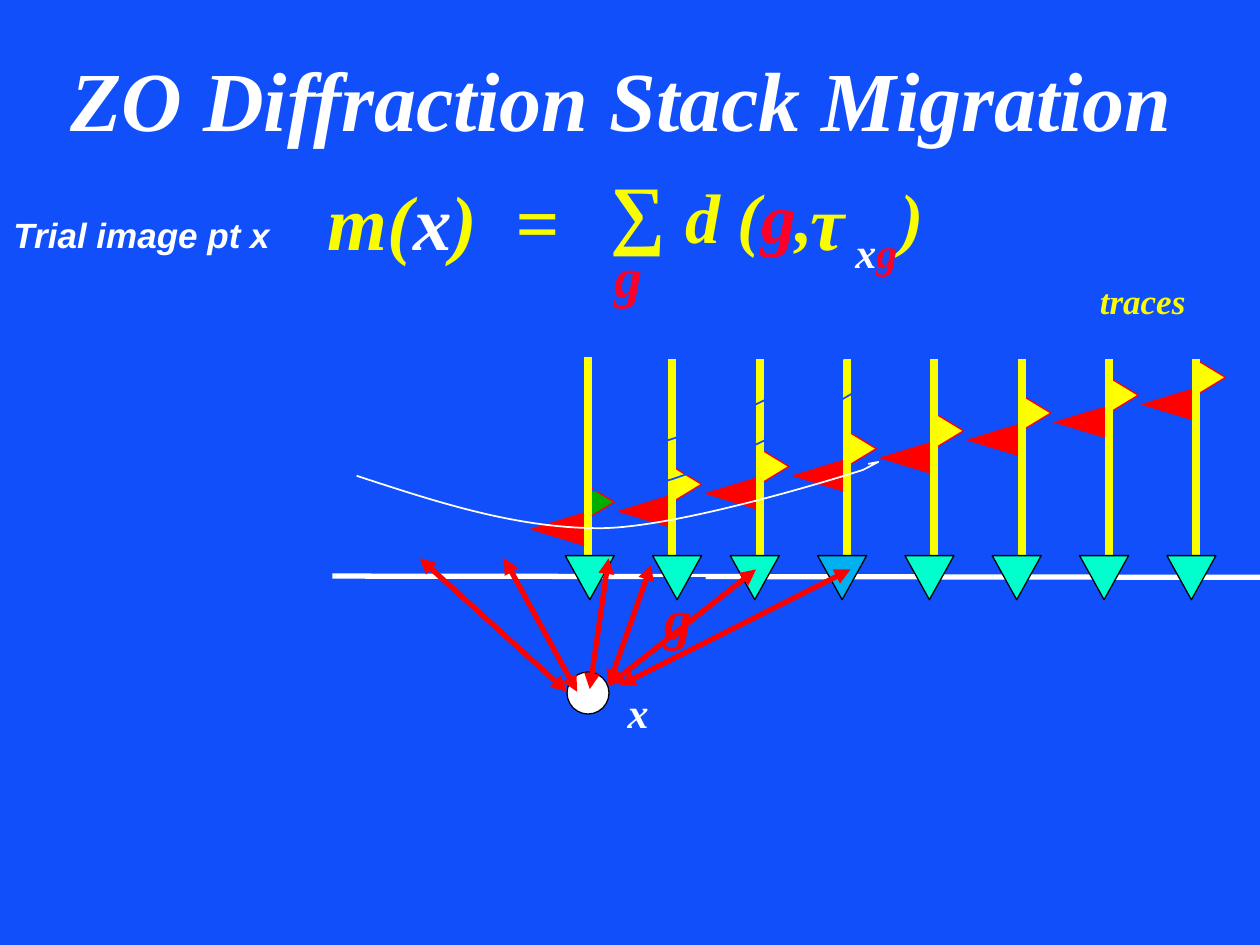
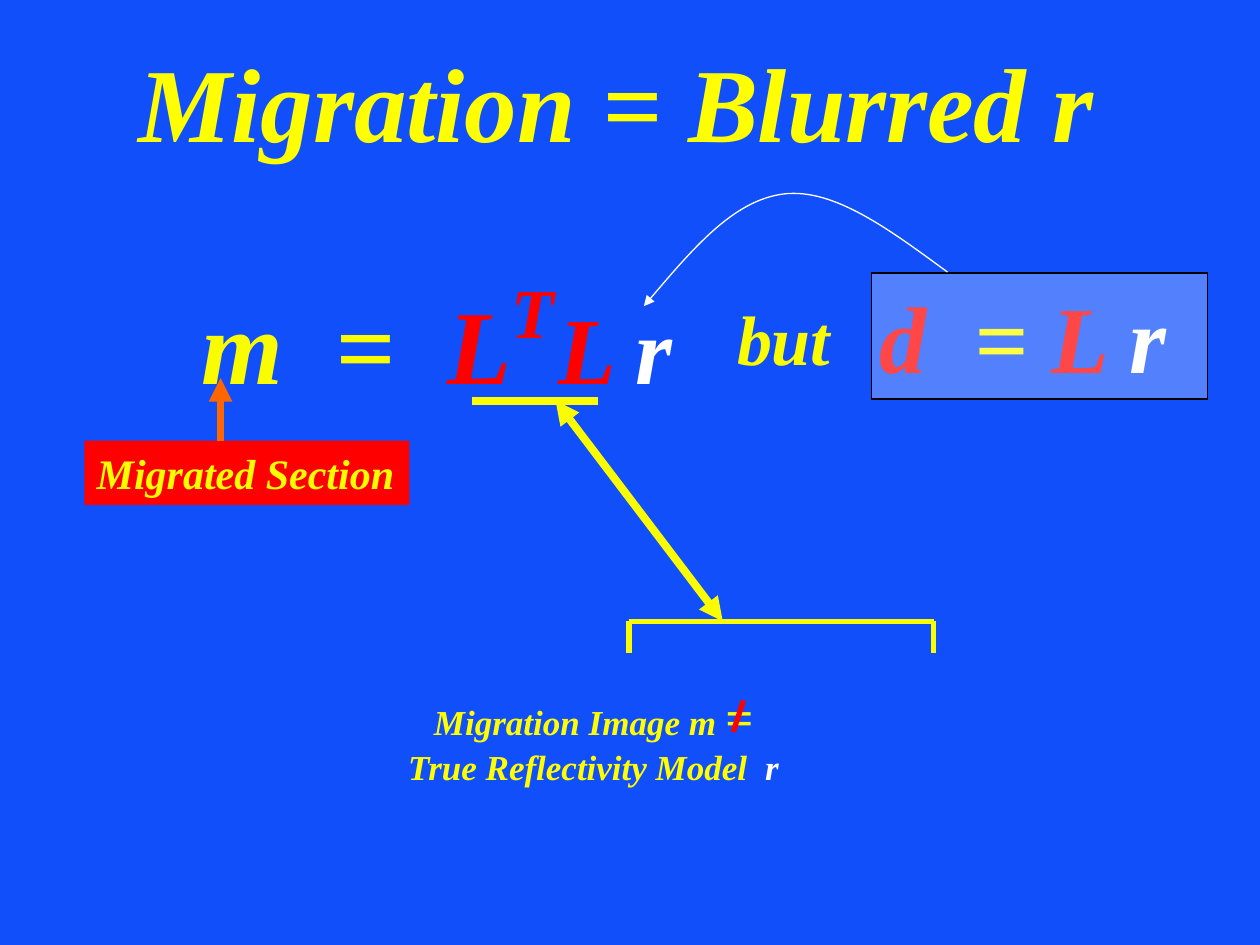
from dataclasses import dataclass

from lxml.etree import SubElement
from pptx import Presentation
from pptx.dml.color import RGBColor
from pptx.enum.shapes import MSO_CONNECTOR, MSO_SHAPE
from pptx.enum.text import MSO_ANCHOR, MSO_AUTO_SIZE, PP_ALIGN
from pptx.oxml.ns import qn
from pptx.util import Pt


@dataclass(frozen=True)
class Theme:
    blue: str = "114FFB"
    white: str = "FFFFFF"
    black: str = "000000"
    yellow: str = "FAFD00"
    bright: str = "FFFF00"
    red: str = "FF0000"
    crimson: str = "FC0128"
    orange: str = "FF6600"
    green: str = "00AE00"
    aqua: str = "00FFCC"
    sky: str = "00B0F0"
    serif: str = "Times New Roman"
    sans: str = "Arial"
    label: int = 20
    note: int = 24
    equals: int = 28
    index: int = 32
    term: int = 40
    symbol: int = 44
    heading: int = 48
    factor: int = 54
    display: int = 60
    hairline: float = 0.75
    thin: float = 1
    medium: float = 3
    thick: float = 4.5


theme = Theme()

STACK_TITLE = ((33.1, 23.8, 650.9, 65.5), theme.heading, [("ZO Diffraction Stack Migration", theme.white)])
TRIAL_LABEL = ((0, 118.4, 162, 31.7), theme.label, [("Trial image pt x", theme.white)])
TRACES_LABEL = ((606.2, 156, 93.6, 32), theme.label, [("traces", theme.yellow)])
RECEIVER_LABEL = ((372.2, 329.8, 31, 46), theme.index, [("g", theme.red)])
POINT_LABEL = ((351.4, 388.8, 26.6, 19.4), theme.note, [("x", theme.white)])
TIME_GAP = {"spc": "4000"}
STACK_FORMULA = [
    ((384.5, 95.8, 217.4, 55.4), theme.term,
     [("d (", theme.yellow), ("g", theme.crimson), (",", theme.yellow),
      (" ", theme.yellow, TIME_GAP), (")", theme.yellow)]),
    ((481.7, 126, 38.2, 36), theme.note, [("x", theme.white), ("g", theme.crimson)]),
    ((180, 95.8, 169.2, 59.8), theme.symbol, [("m(", theme.yellow), ("x", theme.white), (")  =", theme.yellow)]),
    ((342, 90, 73.4, 59.8), theme.symbol, [("∑", theme.yellow)]),
    ((344.2, 134.6, 30.4, 45.4), theme.index, [("g", theme.crimson)]),
    ((455.8, 95.8, 33.8, 59.8), theme.symbol, [("τ", theme.yellow)]),
]
WRAPPED_TERMS = {0, 3}

TRACE_COUNT = 8
TRACE_PITCH = 49.9
WAVELET_RISE = 10.18
CURVE_START = (0, 15.1)
CURVE_BENDS = [
    ((46.1, 43.9), (92.2, 72.7), (140.4, 72)),
    ((188.7, 70.5), (289.5, 8.6), (289.5, 8.6)),
]
CURVE_HOOK = [(298.1, 0), (292.4, 2.2)]
CURVE_HEIGHT = 72.7
BLUE_CURVES = [(210.2, 185.8), (210.2, 208.8)]
RAYS = [
    ((347.8, 319), (337, 393.8)),
    ((288, 319), (329.8, 395.3)),
    ((239.8, 319), (324, 395.3)),
    ((372.2, 322.6), (347.8, 391.7)),
    ((432, 325.4), (347.8, 391.7)),
    ((486, 325.4), (354.2, 391.7)),
]

BLUR_TITLE = ((72, 18, 594, 79.2), theme.display, [("Migration = Blurred r", theme.bright)])
MODEL_EQUATION = ((0, 156.2, 420, 79.2), theme.display, [("m  = ", theme.yellow), (" L ", theme.red)])
BLUR_TERMS = [
    ((285.1, 149.8, 38.9, 55.4), theme.term, [("T", theme.red)]),
    ((414, 165.3, 67.7, 55.4), theme.term, [("but", theme.yellow)]),
    ((494.6, 155.8, 180, 72), theme.factor,
     [("d", theme.red), ("  = ", theme.yellow), ("L ", theme.red), ("r", theme.white)]),
]
REFLECTIVITY = ((311.8, 162, 82.1, 72), theme.factor, [("L ", theme.red), ("r", theme.white)])
SECTION_LABEL = ((48.2, 251.8, 185.8, 36.7), theme.note, [("Migrated Section", theme.yellow)])
CAPTION_BOX = (225.4, 388.3, 227.5, 65.5)
CAPTION = [
    [("Migration Image m ", theme.bright), ("=", theme.bright, {"sz": str(theme.equals * 100)})],
    [("True Reflectivity Model  ", theme.bright), ("r", theme.white)],
]
BRACKET = (359.4, 355, 533.5, 373)
ARC_START = (541.4, 155.5)
ARC_BENDS = [
    ((509, 131.8), (476.6, 107.3), (447.8, 110.9)),
    ((419, 114.5), (393.8, 144.7), (367.9, 175)),
]


def rgb(color):
    return RGBColor.from_string(color)


def points(values):
    return [Pt(value) for value in values]


def add_page(deck):
    page = deck.slides.add_slide(deck.slide_layouts[6])
    page.background.fill.solid()
    page.background.fill.fore_color.rgb = rgb(theme.blue)
    return page


def add_plate(page, place, fill):
    plate = page.shapes.add_shape(MSO_SHAPE.RECTANGLE, *points(place))
    plate.shadow.inherit = False
    plate.fill.solid()
    plate.fill.fore_color.rgb = rgb(fill)
    plate.line.fill.background()
    return plate


def add_text(page, place, size, *lines, font=theme.serif, align=PP_ALIGN.LEFT,
             anchor=MSO_ANCHOR.TOP, wrap=False, fill=None):
    box = add_plate(page, place, fill) if fill else page.shapes.add_textbox(*points(place))
    frame = box.text_frame
    frame.word_wrap = wrap
    frame.auto_size = MSO_AUTO_SIZE.SHAPE_TO_FIT_TEXT
    frame.vertical_anchor = anchor
    for number, line in enumerate(lines):
        para = frame.add_paragraph() if number else frame.paragraphs[0]
        para.alignment = align
        para.font.name = font
        para.font.size = Pt(size)
        para.font.bold = para.font.italic = True
        for text, color, *extras in line:
            span = para.add_run()
            span.text = text
            span.font.color.rgb = rgb(color)
            for setting in [{"kern": "0"}, *extras]:
                for name, value in setting.items():
                    span.font._element.set(name, value)


def add_figure(page, kind, place, fill, outline, rotation=0):
    figure = page.shapes.add_shape(kind, *points(place))
    figure.shadow.inherit = False
    figure.rotation = rotation
    figure.fill.solid()
    figure.fill.fore_color.rgb = rgb(fill)
    figure.line.color.rgb = rgb(outline)
    figure.line.width = Pt(theme.hairline)
    return figure


def style_line(line, color, width, *ends):
    line.color.rgb = rgb(color)
    line.width = Pt(width)
    for end in ends:
        SubElement(line._get_or_add_ln(), qn(f"a:{end}")).set("type", "triangle")


def add_line(page, start, finish, color, width, *ends):
    line = page.shapes.add_connector(MSO_CONNECTOR.STRAIGHT, *points(start + finish))
    SubElement(line._element.spPr, qn("a:effectLst"))
    style_line(line.line, color, width, *ends)


def add_curve(page, start, bends, hook, color, width, *ends):
    track = [spot for bend in bends for spot in bend] + hook
    builder = page.shapes.build_freeform(*points(start))
    builder.add_line_segments([points(spot) for spot in track], close=False)
    curve = builder.convert_to_shape()
    curve.shadow.inherit = False
    curve.fill.background()
    style_line(curve.line, color, width, *ends)
    segments = list(curve._element.spPr.iter(qn("a:lnTo")))
    for first in range(0, 3 * len(bends), 3):
        bend, *others = segments[first:first + 3]
        bend.tag = qn("a:cubicBezTo")
        for other in others:
            bend.append(other[0])
            other.getparent().remove(other)


def add_diffraction(page, left, top, color, height=CURVE_HEIGHT):
    def place(spot):
        return left + spot[0], top + spot[1] * height / CURVE_HEIGHT

    bends = [[place(spot) for spot in bend] for bend in CURVE_BENDS]
    hook = [place(spot) for spot in CURVE_HOOK]
    add_curve(page, place(CURVE_START), bends, hook, color, theme.thin)


def add_wavelet(page, number):
    shift, rise = number * TRACE_PITCH, number * WAVELET_RISE
    add_figure(page, MSO_SHAPE.ISOSCELES_TRIANGLE, (307.4 + shift, 285.8 - rise, 20.2, 33.1),
               theme.red, theme.blue, 270)
    add_figure(page, MSO_SHAPE.ISOSCELES_TRIANGLE, (332.6 + shift, 278.6 - rise, 20.2, 16.6),
               theme.bright if number else theme.green, theme.red, 90)
    if number:
        add_line(page, (334.3 + shift, 327.6), (334.3 + shift, 205.4), theme.yellow, theme.thick)


def add_receiver(page, number):
    left = 323 + number * TRACE_PITCH - (5.5 if number > 1 else 0)
    add_figure(page, MSO_SHAPE.ISOSCELES_TRIANGLE, (left, 317.5, 28, 25.2),
               theme.sky if number == 3 else theme.aqua, theme.black, 180)


def build_stack_page(deck):
    page = add_page(deck)
    add_text(page, *TRIAL_LABEL, font=theme.sans, align=PP_ALIGN.CENTER, fill=theme.blue)
    add_text(page, *TRACES_LABEL, align=PP_ALIGN.CENTER, wrap=True)
    add_text(page, *STACK_TITLE, fill=theme.blue)
    add_line(page, (190, 329.2), (720, 329.9), theme.white, theme.medium)
    add_text(page, *RECEIVER_LABEL, align=PP_ALIGN.CENTER, fill=theme.blue)
    for number in range(TRACE_COUNT):
        add_wavelet(page, number)
    for number in range(1, TRACE_COUNT):
        add_receiver(page, number)
    for left, top in BLUE_CURVES:
        add_diffraction(page, left, top, theme.blue)
    for number, term in enumerate(STACK_FORMULA):
        add_text(page, *term, wrap=number in WRAPPED_TERMS)
    add_line(page, (336.2, 326.2), (336.2, 203.8), theme.bright, theme.thick)
    add_receiver(page, 0)
    add_figure(page, MSO_SHAPE.OVAL, (324, 384, 24, 24), theme.white, theme.black)
    add_text(page, *POINT_LABEL, align=PP_ALIGN.CENTER)
    add_diffraction(page, 203.8, 264, theme.white, 38.2)
    for surface, point in RAYS:
        add_line(page, surface, point, theme.red, theme.medium, "headEnd", "tailEnd")


def build_blur_page(deck):
    page = add_page(deck)
    centred = {"align": PP_ALIGN.CENTER, "anchor": MSO_ANCHOR.MIDDLE}
    add_text(page, *MODEL_EQUATION, wrap=True, **centred)
    for term in BLUR_TERMS:
        add_text(page, *term, **centred)
    add_text(page, *SECTION_LABEL, anchor=MSO_ANCHOR.MIDDLE, fill=theme.red)
    add_line(page, (126, 252), (126, 216), theme.orange, theme.thick, "tailEnd")
    add_text(page, *REFLECTIVITY)
    add_text(page, CAPTION_BOX, theme.label, *CAPTION, **centred)
    left, top, right, bottom = BRACKET
    add_line(page, (left, top), (right, top), theme.yellow, theme.medium)
    for side in (left, right):
        add_line(page, (side, bottom), (side, top), theme.yellow, theme.medium)
    add_line(page, (317.5, 229), (413, top), theme.yellow, theme.thick, "headEnd", "tailEnd")
    add_line(page, (269.5, 229), (341.5, 229), theme.bright, theme.thick)
    add_text(page, *BLUR_TITLE, wrap=True)
    add_line(page, (424.8, 400.3), (419, 418.3), theme.red, theme.medium)
    veil = add_figure(page, MSO_SHAPE.RECTANGLE, (498, 156, 192, 72), theme.white, theme.black)
    tint = veil._element.spPr.find(qn("a:solidFill"))[0]
    SubElement(tint, qn("a:alpha")).set("val", "28000")
    add_curve(page, ARC_START, ARC_BENDS, [], theme.white, theme.hairline, "tailEnd")


def main():
    deck = Presentation()
    deck.slide_width, deck.slide_height = Pt(720), Pt(540)
    build_stack_page(deck)
    build_blur_page(deck)
    deck.save("out.pptx")


if __name__ == "__main__":
    main()
